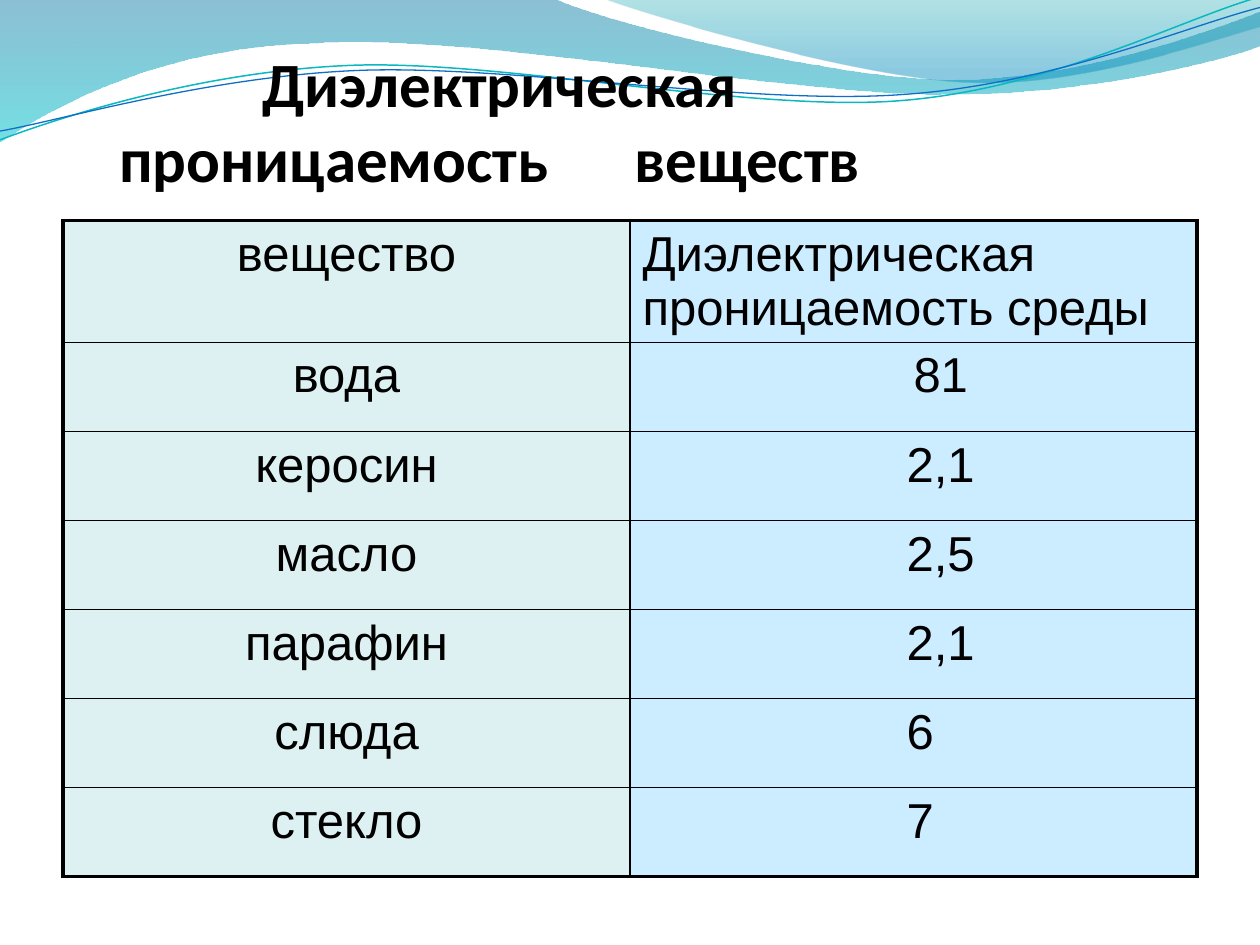
import math

import pptx
import pptx.dml.color
import pptx.enum.text
import pptx.oxml
import pptx.oxml.ns
import pptx.util
from lxml import etree

Pt = pptx.util.Pt
qn = pptx.oxml.ns.qn
Align = pptx.enum.text.PP_ALIGN
Anchor = pptx.enum.text.MSO_ANCHOR

COLORS = {
    "text": "000000", "border": "000000",
    "substance": "DEF1F2", "value": "CCECFF",
    "wave_top": "0074A1", "wave_bottom": "00C6CF",
    "crest_top": "00A1A9", "crest_bottom": "008BBF",
    "teal_line": "0AB8BF", "blue_line": "0F6FC6",
}

# Waves in points: a start, then straight (2 numbers) or cubic (6 numbers) steps
WAVE = [(0, 0), (316.8, -0.7), (342.7, 12.2, 478.1, 45.4, 545.8, 45.4),
        (614.2, 45.4, 689.8, 18.7, 720, 6.5), (720.7, 25.9),
        (707.8, 31.7, 626.4, 54.7, 537.1, 54), (446.4, 54, 275, 20.2, 185, 24.5),
        (92.9, 25.9, 33.1, 59.8, -0.7, 81.4)]
CREST = [(344.9, -0.7), (366.5, 7.9, 491, 44.6, 553.7, 46.8),
         (616.3, 49.7, 691.9, 23, 720, 15.1), (720, 0)]
TEAL_LINE = [(0, 79.9), (34.6, 67, 113.8, 41, 199.4, 37.4),
             (284.4, 33.8, 427, 64.1, 513.4, 57.6),
             (599.8, 51.1, 675.4, 10.8, 718.6, -1.4)]
BLUE_LINE = [(0, 74.9), (33.8, 69.1, 118.1, 43.9, 203.8, 40.3),
             (290.2, 36.7, 429.8, 60.5, 516.2, 54),
             (601.9, 48.2, 677.5, 15.1, 720, 4.3)]
TILT = 2.7  # degrees, counterclockwise, of the thin lines

# Substance, value, extra left indent of the value
ROWS = [
    ("вещество", "Диэлектрическая проницаемость среды", 0),
    ("вода", "81", 31.1),
    ("керосин", "2,1", 31.1),
    ("масло", "2,5", 31.1),
    ("парафин", "2,1", 31.1),
    ("слюда", "6", 7.8),
    ("стекло", "7", 7.8),
]


def rgb(name):
    return pptx.dml.color.RGBColor.from_string(COLORS[name])


def turn(point, center, degrees):
    """Turn a point clockwise about a center."""
    angle = math.radians(degrees)
    x, y = point[0] - center[0], point[1] - center[1]
    return (center[0] + x * math.cos(angle) - y * math.sin(angle),
            center[1] + x * math.sin(angle) + y * math.cos(angle))


class SlideBuilder:
    title_font, title_size = "Calibri", 36
    table_font, table_size = "Arial", 28
    thin, thick = 1, 2.25

    def __init__(self, slide):
        self.slide = slide

    def format_run(self, run, font, size, bold=False):
        run.font.name, run.font.size, run.font.bold = font, Pt(size), bold
        run.font.color.rgb = rgb("text")

    def outline(self, steps, closed, center=(0, 0), tilt=0):
        points = [turn(step[i:i + 2], center, tilt)
                  for step in steps for i in range(0, len(step), 2)]
        points = [(Pt(x), Pt(y)) for x, y in points]
        builder = self.slide.shapes.build_freeform(*points[0])
        builder.add_line_segments(points[1:], close=closed)
        shape = builder.convert_to_shape()
        shape.shadow.inherit = False
        shape.rotation = -tilt
        # Merge the three points of each cubic step into one curve
        segments = iter(list(shape.element.iter(qn("a:lnTo"))))
        for step in steps[1:]:
            segment = next(segments)
            if len(step) == 6:
                segment.tag = qn("a:cubicBezTo")
                for _ in range(2):
                    extra = next(segments)
                    segment.append(extra[0])
                    extra.getparent().remove(extra)
        return shape

    def wave(self, steps, stops):
        shape = self.outline(steps, True)
        shape.line.fill.background()
        shape.fill.gradient()
        shape.fill.gradient_angle = 270
        for stop, (position, color, _) in zip(shape.fill.gradient_stops, stops):
            stop.position = position
            stop.color.rgb = rgb(color)
        gradient = shape.element.spPr.find(qn("a:gradFill"))
        for color, (_, _, opacity) in zip(gradient.iter(qn("a:srgbClr")), stops):
            etree.SubElement(color, qn("a:alpha"), val=str(opacity * 1000))

    def curve(self, steps, center, color, width):
        shape = self.outline(steps, False, center, TILT)
        shape.fill.background()
        shape.line.color.rgb = rgb(color)
        shape.line.width = Pt(width)

    def title(self, first_line, second_line, left, top, width, height):
        shape = self.slide.shapes.title
        shape.left, shape.top, shape.width, shape.height = map(Pt, (left, top, width, height))
        self.slide.shapes.element.append(shape.element)  # in front of the waves
        frame = shape.text_frame
        frame.margin_left = frame.margin_right = frame.margin_bottom = 0
        frame.margin_top = Pt(3.6)
        frame.vertical_anchor = Anchor.BOTTOM
        frame.word_wrap = True
        frame.auto_size = pptx.enum.text.MSO_AUTO_SIZE.NONE
        paragraph = frame.paragraphs[0]
        paragraph.alignment = Align.LEFT
        properties = paragraph._p.get_or_add_pPr()
        properties.set("marL", str(Pt(32.2)))
        properties.set("indent", str(Pt(81.8)))
        paragraph.add_run().text = first_line
        paragraph.add_line_break()
        first_word, last_word = second_line.split()
        for text in (first_word, " ", last_word):
            paragraph.add_run().text = text
        for run in paragraph.runs:
            self.format_run(run, self.title_font, self.title_size, True)
        # One widely spaced blank between the two words
        paragraph.runs[2].font._element.set("spc", "4070")

    def border(self, cell, side, width):
        line = etree.SubElement(cell._tc.get_or_add_tcPr(), qn("a:ln" + side), w=str(Pt(width)))
        fill = etree.SubElement(line, qn("a:solidFill"))
        etree.SubElement(fill, qn("a:srgbClr"), val=COLORS["border"])

    def cell(self, cell, text, fill, alignment, indent, outer_sides):
        for side in "LRTB":
            self.border(cell, side, self.thick if side in outer_sides else self.thin)
        cell.fill.solid()
        cell.fill.fore_color.rgb = rgb(fill)
        cell.margin_left = Pt(7.2 + indent)
        cell.text_frame.text = text
        paragraph = cell.text_frame.paragraphs[0]
        paragraph.alignment = alignment
        self.format_run(paragraph.runs[0], self.table_font, self.table_size)

    def table(self, rows, left, top, width, row_height):
        frame = self.slide.shapes.add_table(len(rows), 2, Pt(left), Pt(top),
                                            Pt(width), Pt(row_height * len(rows)))
        table = frame.table
        table.first_row = table.horz_banding = False
        for index, (substance, value, indent) in enumerate(rows):
            table.rows[index].height = Pt(row_height)
            ends = ("T" if index == 0 else "") + ("B" if index == len(rows) - 1 else "")
            value_alignment = Align.LEFT if index == 0 else Align.CENTER
            self.cell(table.cell(index, 0), substance, "substance", Align.CENTER, 0, "L" + ends)
            self.cell(table.cell(index, 1), value, "value", value_alignment, indent, "R" + ends)


def main():
    presentation = pptx.Presentation()
    presentation.slide_width, presentation.slide_height = Pt(720), Pt(540)
    builder = SlideBuilder(presentation.slides.add_slide(presentation.slide_layouts[5]))

    # Decorative waves
    builder.wave(WAVE, [(0, "wave_top", 45), (1, "wave_bottom", 55)])
    builder.wave(CREST, [(0, "crest_top", 30), (0.8, "crest_bottom", 45)])
    builder.curve(TEAL_LINE, (359.3, 41.4), "teal_line", 0.85)
    builder.curve(BLUE_LINE, (359.6, 42.5), "blue_line", 0.75)

    # Title and table
    builder.title("Диэлектрическая", "проницаемость веществ", 36, 21.6, 648, 90)
    builder.table(ROWS, 36, 126, 648, 50.9)

    presentation.save("out.pptx")


if __name__ == "__main__":
    main()
